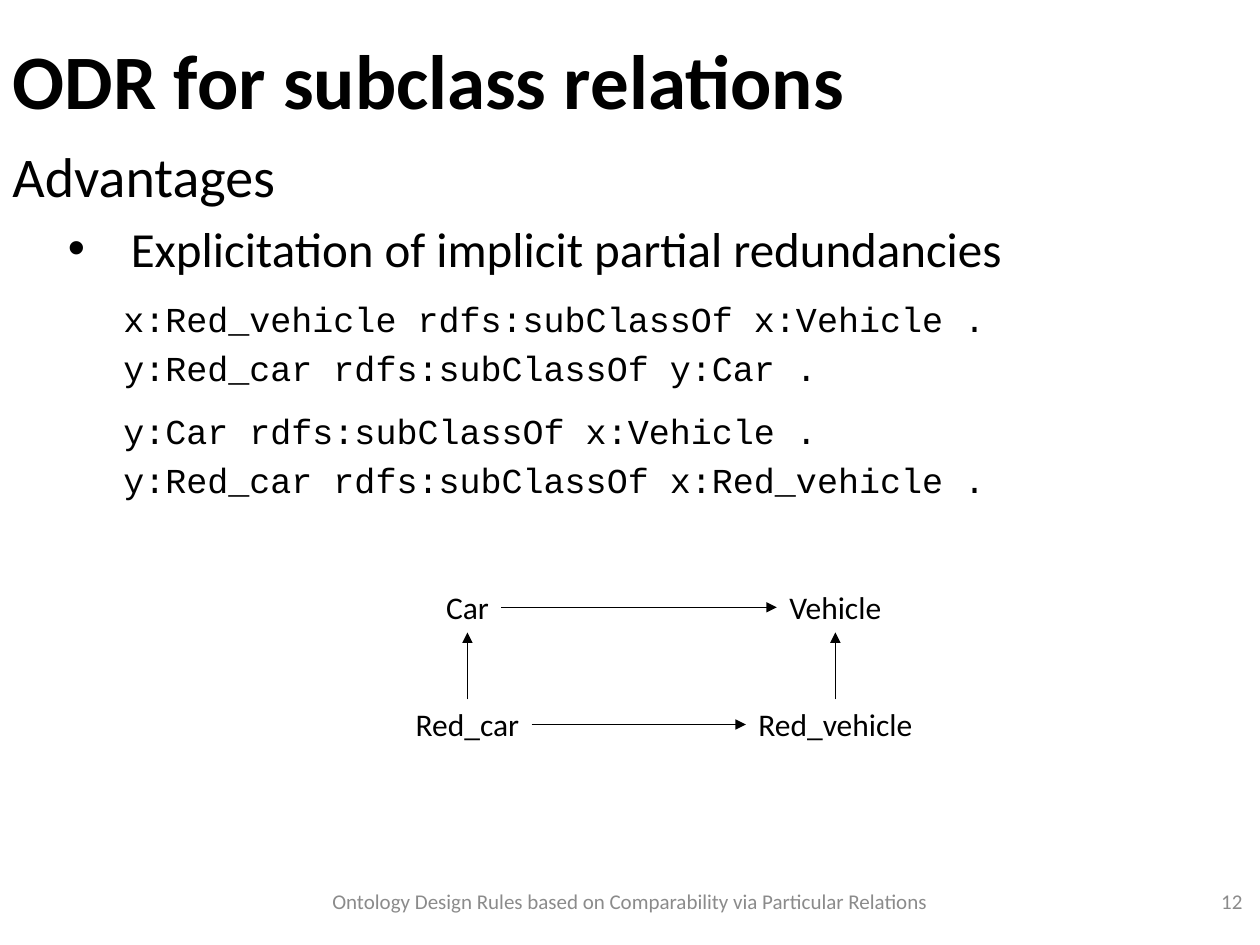
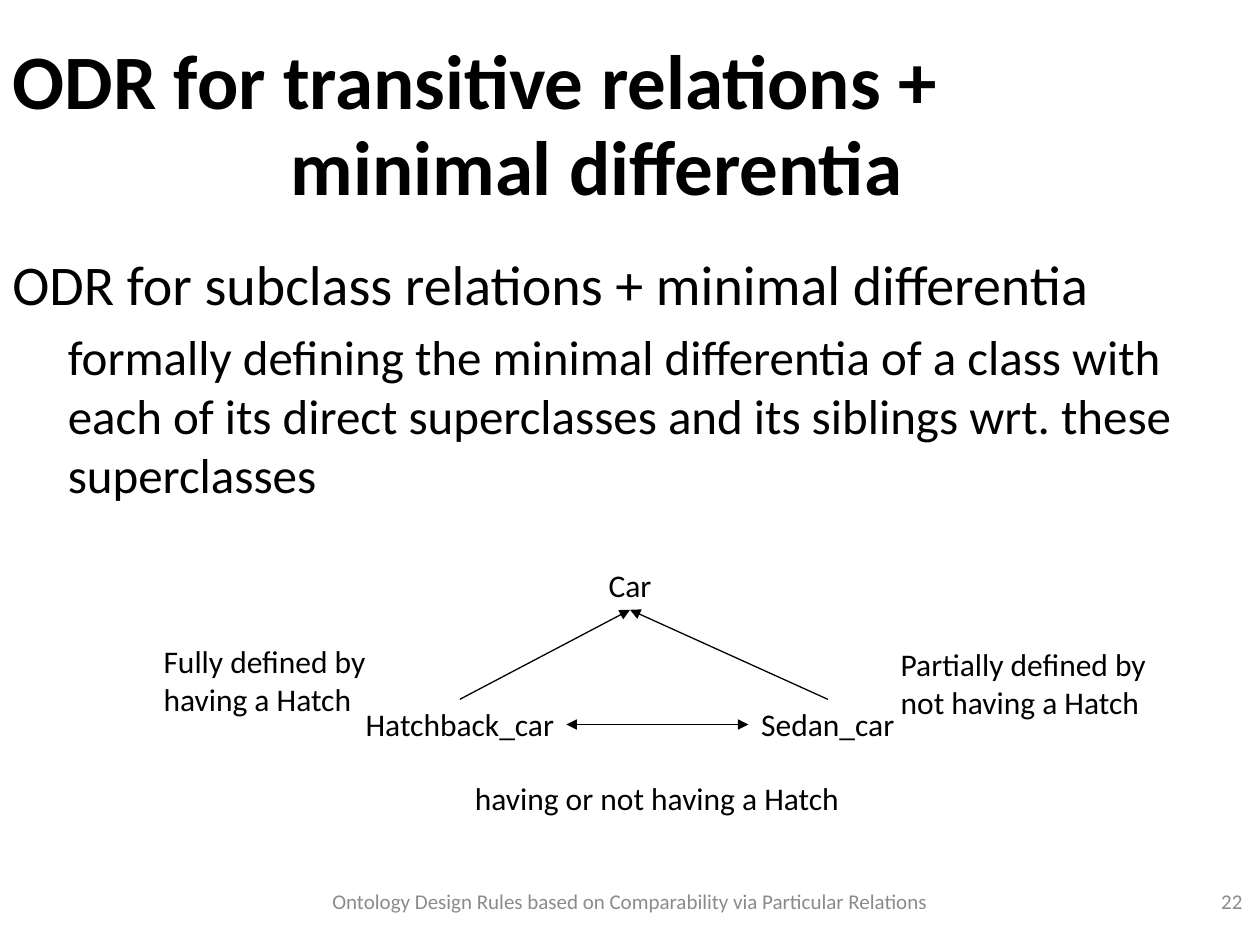
import pptx
import pptx.dml.color
import pptx.enum.shapes
import pptx.enum.text
import pptx.oxml
import pptx.oxml.ns
import pptx.util

Inches = pptx.util.Inches
ALIGN = pptx.enum.text.PP_ALIGN
ANCHOR = pptx.enum.text.MSO_ANCHOR
TOP, LEFT, BOTTOM, RIGHT = range(4)

BLACK, GREY = "000000", "8B8B8B"
FOOTER = "Ontology Design Rules based on Comparability via Particular Relations"
TITLE = {"size": 44, "bold": True}
HEADING = {"size": 32, "space_before": 6.4}
POINT = {"size": 28, "space_before": 5.6}
CODE = {"size": 20, "name": "Courier New", "indent": 0.88}
CODE_FIRST = {**CODE, "space_before": 12}
CODE_NEXT = {**CODE, "space_before": 4}
LABEL = {"size": 18}
SMALL = {"size": 12, "color": GREY}


def color(value):
    """Turn a hex string into a colour."""
    return pptx.dml.color.RGBColor.from_string(value)


class Deck:
    """Hold the shared style and the current slide."""

    def __init__(self):
        """Start an empty presentation."""
        self.presentation = pptx.Presentation()
        self.presentation.slide_width = Inches(10)
        self.presentation.slide_height = Inches(7.5)
        self.slide = None

    def format_paragraph(self, paragraph, text, style, alignment):
        """Write one paragraph and apply its format values."""
        run = paragraph.add_run()
        run.text = text
        font_values = {
            "name": style.get("name", "Calibri"),
            "size": pptx.util.Pt(style["size"]),
            "bold": style.get("bold", False),
        }
        paragraph_values = {
            "alignment": alignment,
            "space_before": pptx.util.Pt(style.get("space_before", 0)),
        }
        for target, values in ((run.font, font_values), (paragraph, paragraph_values)):
            for name, value in values.items():
                setattr(target, name, value)
        run.font.color.rgb = color(style.get("color", BLACK))
        properties = paragraph._p.get_or_add_pPr()
        properties.set("marL", str(Inches(style.get("indent", 0))))
        properties.set("indent", str(Inches(style.get("hanging", 0))))
        if "bullet" in style:
            for tag, attribute, value in (("buFont", "typeface", "Arial"), ("buChar", "char", style["bullet"])):
                bullet = pptx.oxml.parse_xml(f'<a:{tag} {pptx.oxml.ns.nsdecls("a")} {attribute}="{value}"/>')
                properties.append(bullet)

    def fill_frame(self, shape, lines, alignment=ALIGN.LEFT, anchor=ANCHOR.TOP, wrap=True):
        """Set up a text frame and write its (text, style) lines."""
        frame = shape.text_frame
        values = {
            "auto_size": pptx.enum.text.MSO_AUTO_SIZE.NONE,
            "word_wrap": wrap,
            "vertical_anchor": anchor,
            "margin_left": Inches(0.1),
            "margin_right": Inches(0.1),
            "margin_top": Inches(0.05),
            "margin_bottom": Inches(0.05),
        }
        for name, value in values.items():
            setattr(frame, name, value)
        for index, (text, style) in enumerate(lines):
            paragraph = frame.add_paragraph() if index else frame.paragraphs[0]
            self.format_paragraph(paragraph, text, style, alignment)

    def add_text(self, box, lines, **options):
        """Add a text box at left, top, width, height."""
        shape = self.slide.shapes.add_textbox(*map(Inches, box))
        self.fill_frame(shape, lines, **options)
        return shape

    def add_slide(self, title, number):
        """Add a slide with its title, footer and page number."""
        self.slide = self.presentation.slides.add_slide(self.presentation.slide_layouts[5])
        shape = self.slide.shapes.title
        places = {"left": 0, "top": 0, "width": 10, "height": 1.25}
        for name, value in places.items():
            setattr(shape, name, Inches(value))
        self.fill_frame(shape, [(title, TITLE)], anchor=ANCHOR.MIDDLE)
        self.add_text((2.48, 6.95, 5.04, 0.4), [(FOOTER, SMALL)], alignment=ALIGN.CENTER, anchor=ANCHOR.MIDDLE)
        self.add_text((7.63, 6.95, 2.33, 0.4), [(str(number), SMALL)], alignment=ALIGN.RIGHT, anchor=ANCHOR.MIDDLE)

    def add_node(self, text, center, top, width):
        """Add a class name centred on a horizontal position."""
        box = (center - width / 2, top, width, 0.4)
        return self.add_text(box, [(text, LABEL)], alignment=ALIGN.CENTER, wrap=False)

    def add_note(self, left, top, width, *texts):
        """Add a left-aligned note of one or more lines."""
        lines = [(text, LABEL) for text in texts]
        self.add_text((left, top, width, 0.1 + 0.3 * len(texts)), lines, wrap=False)

    def add_arrow(self, start, start_side, end, end_side, double=False):
        """Join two nodes with an arrow."""
        connector = self.slide.shapes.add_connector(pptx.enum.shapes.MSO_CONNECTOR.STRAIGHT, 0, 0, 0, 0)
        connector.begin_connect(start, start_side)
        connector.end_connect(end, end_side)
        connector.line.color.rgb = color(BLACK)
        connector.line.width = pptx.util.Pt(0.75)
        namespace = pptx.oxml.ns.nsdecls("a")
        for tag in ("headEnd", "tailEnd") if double else ("tailEnd",):
            connector.line._get_or_add_ln().append(pptx.oxml.parse_xml(f'<a:{tag} {namespace} type="triangle"/>'))
        connector._element.spPr.append(pptx.oxml.parse_xml(f"<a:effectLst {namespace}/>"))


def build_subclass_slide(deck):
    """Build the slide on subclass relations."""
    deck.add_slide("ODR for subclass relations", 12)
    bullet_point = {**POINT, "bullet": "•", "indent": 0.94, "hanging": -0.5}
    deck.add_text((0, 1.07, 10.12, 3.72), [
        ("Advantages", HEADING),
        ("Explicitation of implicit partial redundancies", bullet_point),
        ("x:Red_vehicle rdfs:subClassOf x:Vehicle .", CODE_FIRST),
        ("y:Red_car rdfs:subClassOf y:Car .", CODE_NEXT),
        ("y:Car rdfs:subClassOf x:Vehicle .", CODE_FIRST),
        ("y:Red_car rdfs:subClassOf x:Red_vehicle .", CODE_NEXT),
    ])
    car_center, vehicle_center, upper, lower = 3.71, 6.63, 4.62, 5.55
    car = deck.add_node("Car", car_center, upper, 0.54)
    red_car = deck.add_node("Red_car", car_center, lower, 1.02)
    vehicle = deck.add_node("Vehicle", vehicle_center, upper, 0.93)
    red_vehicle = deck.add_node("Red_vehicle", vehicle_center, lower, 1.42)
    for child, parent in ((red_car, car), (red_vehicle, vehicle)):
        deck.add_arrow(child, TOP, parent, BOTTOM)
    for child, parent in ((car, vehicle), (red_car, red_vehicle)):
        deck.add_arrow(child, RIGHT, parent, LEFT)


def build_differentia_slide(deck):
    """Build the slide on minimal differentia."""
    deck.add_slide("ODR for transitive relations +", 22)
    deck.add_text((2.21, 0.68, 7.75, 1.25), [("minimal differentia", TITLE)], anchor=ANCHOR.MIDDLE)
    definition = (
        "formally defining the minimal differentia of a class with each of its "
        "direct superclasses and its siblings wrt. these superclasses"
    )
    deck.add_text((0, 1.93, 10.12, 5.02), [
        ("ODR for subclass relations + minimal differentia", HEADING),
        (definition, {**POINT, "indent": 0.44}),
    ])
    car = deck.add_node("Car", 5, 4.44, 0.54)
    hatchback = deck.add_node("Hatchback_car", 3.65, 5.55, 1.69)
    sedan = deck.add_node("Sedan_car", 6.57, 5.55, 1.26)
    for child in (hatchback, sedan):
        deck.add_arrow(child, TOP, car, BOTTOM)
    deck.add_arrow(hatchback, RIGHT, sedan, LEFT, double=True)
    deck.add_note(1.2, 5.05, 1.8, "Fully defined by", "having a Hatch")
    deck.add_note(7.05, 5.07, 2.14, "Partially defined by", "not having a Hatch")
    deck.add_note(3.67, 6.13, 3.09, "having or not having a Hatch")


def main():
    """Build and save the presentation."""
    deck = Deck()
    build_subclass_slide(deck)
    build_differentia_slide(deck)
    deck.presentation.save("out.pptx")


if __name__ == "__main__":
    main()
